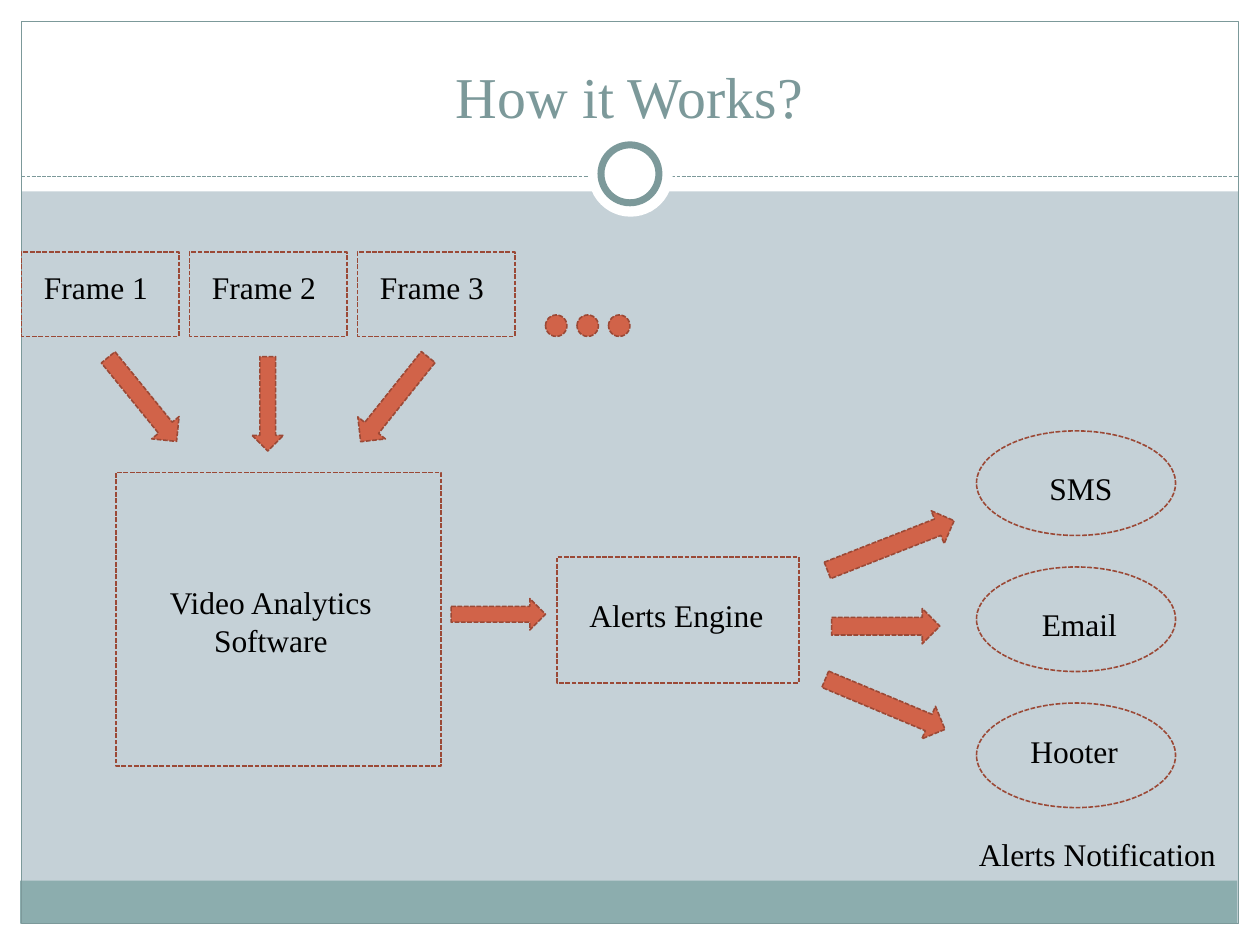
import pptx
import pptx.util
import pptx.dml.color
import pptx.enum.dml
import pptx.enum.shapes
import pptx.enum.text
import pptx.oxml

Inches = pptx.util.Inches
Pt = pptx.util.Pt
RGBColor = pptx.dml.color.RGBColor
SHAPE = pptx.enum.shapes.MSO_SHAPE
ALIGN = pptx.enum.text.PP_ALIGN
DASH = pptx.enum.dml.MSO_LINE.SQUARE_DOT

BACK = RGBColor(0xC5, 0xD1, 0xD7)
WHITE = RGBColor(0xFF, 0xFF, 0xFF)
BLACK = RGBColor(0, 0, 0)
TEAL = RGBColor(0x7C, 0x99, 0x9A)
BAND = RGBColor(0x8C, 0xAD, 0xAE)
RUST = RGBColor(0xD1, 0x63, 0x49)
BROWN = RGBColor(0x9B, 0x49, 0x36)
FONT = "Times New Roman"


def add_shape(slide, kind, box, fill=None, line=None, width=0.75):
    shape = slide.shapes.add_shape(kind, *map(Inches, box))
    shape.shadow.inherit = False
    if fill is None:
        shape.fill.background()
    else:
        shape.fill.solid()
        shape.fill.fore_color.rgb = fill
    if line is None:
        shape.line.fill.background()
    else:
        shape.line.color.rgb = line
        shape.line.width = Pt(width)
    return shape


def add_node(slide, kind, box, fill=None, turn=0):
    """Add a diagram shape with the dashed brown outline."""
    shape = add_shape(slide, kind, box, fill, BROWN, 0.9)
    shape.line.dash_style = DASH
    shape.rotation = turn


def style(par, size, color, align):
    par.alignment = align
    par.font.name = FONT
    par.font.size = Pt(size)
    par.font.color.rgb = color


def add_label(slide, text, box, align=ALIGN.LEFT):
    frame = slide.shapes.add_textbox(*map(Inches, box)).text_frame
    frame.word_wrap = True
    frame.text = text
    for par in frame.paragraphs:
        style(par, 18, BLACK, align)


def add_rule(slide, left, right, y):
    rule = slide.shapes.add_connector(
        pptx.enum.shapes.MSO_CONNECTOR.STRAIGHT,
        Inches(left), Inches(y), Inches(right), Inches(y))
    rule.line.color.rgb = TEAL
    rule.line.width = Pt(0.75)
    rule.line.dash_style = DASH
    props = rule._element.spPr
    props.append(pptx.oxml.parse_xml(
        '<a:effectLst xmlns:a='
        '"http://schemas.openxmlformats.org/drawingml/2006/main"/>'))


def add_decor(slide):
    slide.background.fill.solid()
    slide.background.fill.fore_color.rgb = BACK
    for box in ((0, 7.33, 10, 0.17), (0, 0, 10, 1.52),
                (0, 0, 0.17, 7.5), (9.83, 0, 0.17, 7.5)):
        add_shape(slide, SHAPE.RECTANGLE, box, WHITE)
    add_shape(slide, SHAPE.RECTANGLE, (0.16, 6.99, 9.66, 0.34), BAND)
    add_shape(slide, SHAPE.RECTANGLE, (0.17, 0.17, 9.66, 7.16), line=TEAL)
    add_rule(slide, 0.17, 9.83, 1.4)
    add_shape(slide, SHAPE.OVAL, (4.67, 1.05, 0.67, 0.67), WHITE)
    add_shape(slide, SHAPE.OVAL, (4.77, 1.15, 0.46, 0.46), WHITE, TEAL, 4)


def set_title(slide, text):
    title = slide.shapes.title
    title.left, title.top, title.width, title.height = map(
        Inches, (0.33, 0.25, 9.33, 0.83))
    frame = title.text_frame
    frame.text = text
    frame.auto_size = pptx.enum.text.MSO_AUTO_SIZE.NONE
    frame.vertical_anchor = pptx.enum.text.MSO_ANCHOR.BOTTOM
    style(frame.paragraphs[0], 33, TEAL, ALIGN.CENTER)


def add_frames(slide):
    for i in range(3):
        left = 0.17 + i * 4 / 3
        add_node(slide, SHAPE.RECTANGLE, (left, 2, 1.25, 0.67))
        add_label(slide, f"Frame {i + 1}", (left + 0.08, 2.08, 1.25, 0.42))
        add_node(slide, SHAPE.OVAL, (4.33 + i / 4, 2.5, 0.17, 0.17), RUST)


def add_engines(slide):
    add_node(slide, SHAPE.RECTANGLE, (0.92, 3.75, 2.58, 2.33))
    add_label(slide, "Video Analytics\nSoftware", (1.15, 4.58, 2, 0.71),
              ALIGN.CENTER)
    add_node(slide, SHAPE.RECTANGLE, (4.42, 4.42, 1.92, 1))
    add_label(slide, "Alerts Engine", (4.58, 4.68, 1.75, 0.4))


def add_alerts(slide):
    labels = (("SMS", 8.23, 3.67), ("Email", 8.17, 4.75),
              ("Hooter", 8.08, 5.76))
    for i, (text, left, top) in enumerate(labels):
        add_node(slide, SHAPE.OVAL, (7.75, 3.42 + i * 1.08, 1.58, 0.83))
        add_label(slide, text, (left, top, 1, 0.4))
    add_label(slide, "Alerts Notification", (7.67, 6.58, 2.17, 0.4))


def add_arrows(slide):
    add_node(slide, SHAPE.DOWN_ARROW, (2, 2.83, 0.25, 0.75), RUST)
    for box, turn in (((0.7, 3.03, 0.86, 0.28), 50.9),
                      ((2.7, 3.03, 0.86, 0.28), 128.6),
                      ((3.58, 4.75, 0.75, 0.25), 0),
                      ((6.53, 4.19, 1.08, 0.28), 338.6),
                      ((6.6, 4.83, 0.86, 0.28), 0),
                      ((6.51, 5.45, 1.03, 0.28), 22.7)):
        add_node(slide, SHAPE.RIGHT_ARROW, box, RUST, turn)


def main():
    deck = pptx.Presentation()
    deck.slide_width, deck.slide_height = Inches(10), Inches(7.5)
    slide = deck.slides.add_slide(deck.slide_layouts[5])
    add_decor(slide)
    set_title(slide, "How it Works?")
    # The title placeholder comes first, so lift it above the white bands.
    tree = slide.shapes._spTree
    tree.append(slide.shapes.title._element)
    add_frames(slide)
    add_engines(slide)
    add_alerts(slide)
    add_arrows(slide)
    deck.save("out.pptx")


if __name__ == "__main__":
    main()
